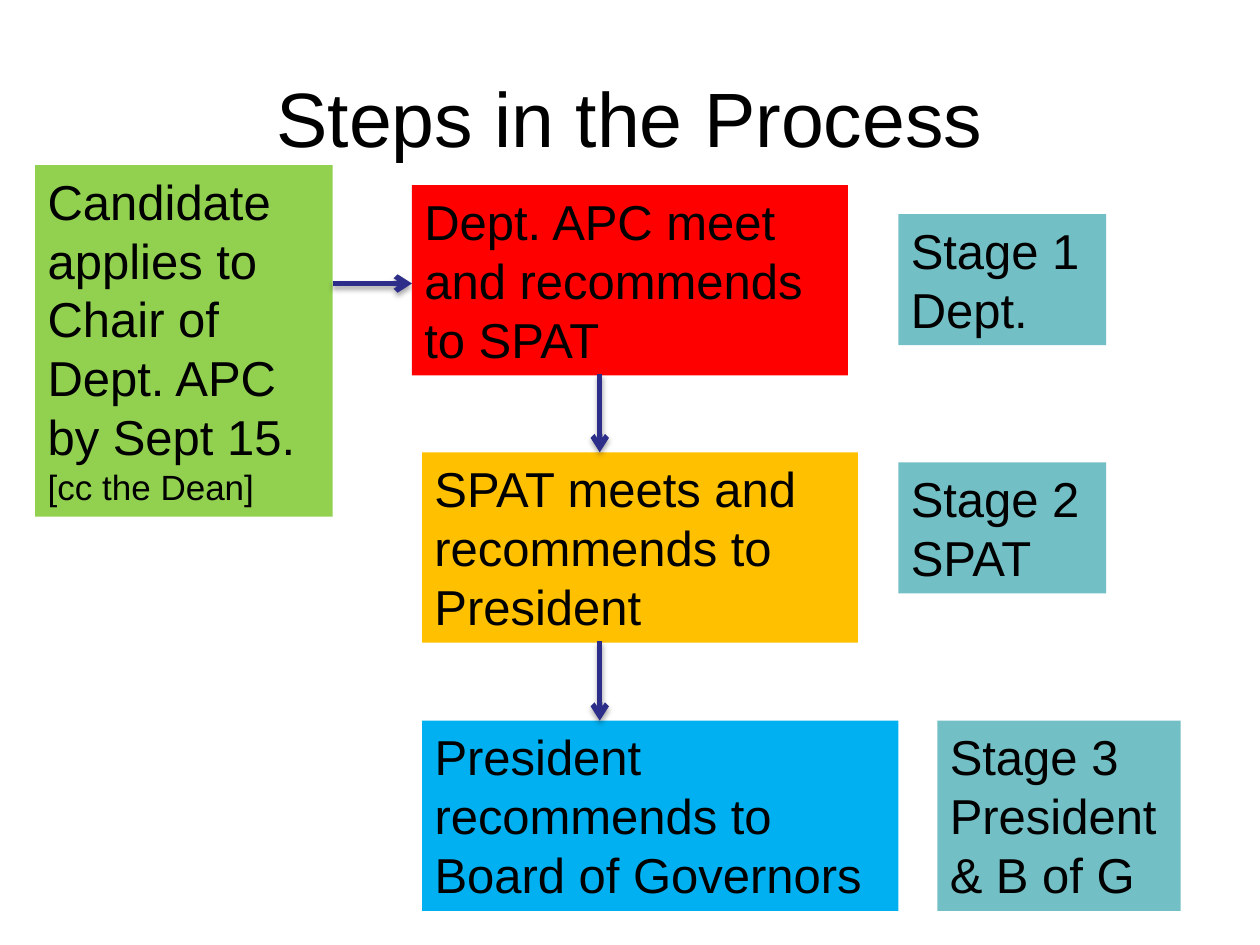
from lxml.etree import SubElement
from pptx import Presentation
from pptx.dml.color import RGBColor
from pptx.enum.shapes import MSO_CONNECTOR as CONN, MSO_SHAPE as SHAPE
from pptx.enum.text import MSO_ANCHOR as ANCHOR, MSO_AUTO_SIZE as FIT, PP_ALIGN as ALIGN
from pptx.oxml.ns import qn
from pptx.util import Inches, Pt

COLORS = {
    "text": "000000",
    "arrow": "2D2D8A",
    "candidate": "92D050",
    "dept": "FF0000",
    "spat": "FFC000",
    "president": "00B0F0",
    "stage": "72BFC5",
}
STEP_H = 1.51
STEP_X = 3.35
STEP_TOPS = (1.47, 3.59, 5.72)
ARROW_X = 4.76


def rgb(name):
    return RGBColor.from_string(COLORS[name])


def write(tf, lines, align=ALIGN.LEFT):
    for i, (text, size) in enumerate(lines):
        p = tf.paragraphs[0] if i == 0 else tf.add_paragraph()
        p.alignment = align
        r = p.add_run()
        r.text = text
        for key, value in {"name": "Arial", "size": Pt(size)}.items():
            setattr(r.font, key, value)
        r.font.color.rgb = rgb("text")


def add_title(s, box, text):
    tf = s.shapes.add_textbox(*map(Inches, box)).text_frame
    for key, value in {"word_wrap": True, "vertical_anchor": ANCHOR.MIDDLE}.items():
        setattr(tf, key, value)
    write(tf, [(text, 44)], ALIGN.CENTER)


def add_box(s, box, color, lines):
    sp = s.shapes.add_shape(SHAPE.RECTANGLE, *map(Inches, box))
    sp.shadow.inherit = False
    sp.fill.solid()
    sp.fill.fore_color.rgb = rgb(color)
    sp.line.fill.background()
    tf = sp.text_frame
    frame = {"word_wrap": True, "vertical_anchor": ANCHOR.TOP, "auto_size": FIT.SHAPE_TO_FIT_TEXT}
    for key, value in frame.items():
        setattr(tf, key, value)
    write(tf, lines)


def add_arrow(s, start, end):
    c = s.shapes.add_connector(CONN.STRAIGHT, *map(Inches, start + end))
    c.line.color.rgb = rgb("arrow")
    c.line.width = Pt(3)
    spPr = c._element.spPr
    SubElement(spPr.find(qn("a:ln")), qn("a:tailEnd"), type="arrow")
    effects = SubElement(spPr, qn("a:effectLst"))
    shadow = SubElement(effects, qn("a:outerShdw"), blurRad=str(Pt(3.1)),
                        dist=str(Pt(1.8)), dir="5400000", rotWithShape="0")
    color = SubElement(shadow, qn("a:srgbClr"), val=COLORS["text"])
    SubElement(color, qn("a:alpha"), val="35000")


def add_steps(s):
    add_box(s, (0.28, 1.31, 2.36, 2.79), "candidate", [
        ("Candidate applies to Chair of Dept. APC by Sept 15.", 28),
        ("[cc the Dean]", 20),
    ])
    add_arrow(s, (2.64, 2.25), (3.27, 2.25))
    steps = [
        (3.27, 3.46, "dept", "Dept. APC meet and recommends to SPAT"),
        (STEP_X, 3.46, "spat", "SPAT meets and recommends to President"),
        (STEP_X, 3.78, "president", "President recommends to Board of Governors"),
    ]
    for top, (left, width, color, text) in zip(STEP_TOPS, steps):
        add_box(s, (left, top, width, STEP_H), color, [(text, 28)])
    for top, following in zip(STEP_TOPS, STEP_TOPS[1:]):
        add_arrow(s, (ARROW_X, top + STEP_H - 0.01), (ARROW_X, following))


def add_stages(s):
    stages = [
        ((7.13, 1.7, 1.65, 1.04), ("Stage 1", "Dept.")),
        ((7.13, 3.67, 1.65, 1.04), ("Stage 2", "SPAT")),
        ((7.44, STEP_TOPS[2], 1.93, STEP_H), ("Stage 3 President", "& B of G")),
    ]
    for box, lines in stages:
        add_box(s, box, "stage", [(text, 28) for text in lines])


def main():
    prs = Presentation()
    prs.slide_width, prs.slide_height = Inches(10), Inches(7.5)
    s = prs.slides.add_slide(prs.slide_layouts[6])
    add_title(s, (0.5, 0.3, 9, 1.25), "Steps in the Process")
    add_steps(s)
    add_stages(s)
    prs.save("out.pptx")


if __name__ == "__main__":
    main()
